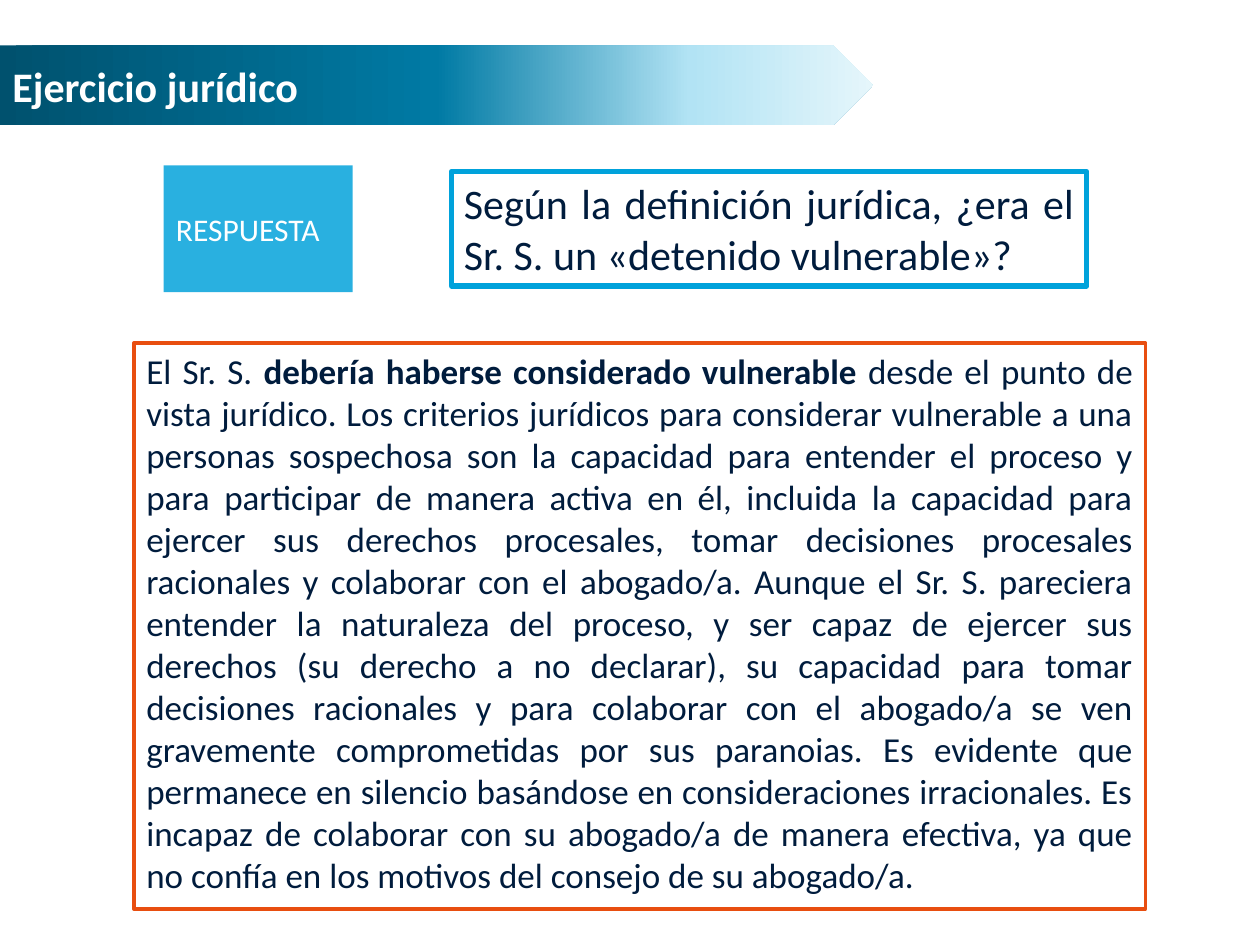
"""Build the legal exercise slide with its question and answer."""
from lxml.etree import SubElement
from pptx import Presentation
from pptx.dml.color import RGBColor
from pptx.enum.shapes import MSO_SHAPE
from pptx.enum.text import MSO_ANCHOR, PP_ALIGN
from pptx.oxml.ns import qn
from pptx.util import Pt

THEME = {
    "font": "Calibri",
    "white": "FFFFFF",
    "ink": "001C3D",
    "blue": "00A2DB",
    "orange": "E84E10",
    "banner": [(0, "00516E"), (50, "007AA4"), (79, "B2E3F4"), (100, "E5F6FB")],
    "label_opacity": 84,
    "large": 24,
    "body": 20,
    "label": 18,
}

TITLE = [("Ejercicio jurídico", True)]
QUESTION = [("Según la definición jurídica, ¿era el Sr. S. un «detenido vulnerable»?", False)]
LABEL = [("RESPUESTA", False)]
ANSWER = [
    ("El Sr. S. ", False),
    ("debería haberse considerado vulnerable", True),
    (
        " desde el punto de vista jurídico. Los criterios jurídicos para considerar "
        "vulnerable a una personas sospechosa son la capacidad para entender el proceso "
        "y para participar de manera activa en él, incluida la capacidad para ejercer "
        "sus derechos procesales, tomar decisiones procesales racionales y colaborar "
        "con el abogado/a. Aunque el Sr. S. pareciera entender la naturaleza del "
        "proceso, y ser capaz de ejercer sus derechos (su derecho a no declarar), su "
        "capacidad para tomar decisiones racionales y para colaborar con el abogado/a "
        "se ven gravemente comprometidas por sus paranoias. Es evidente que permanece "
        "en silencio basándose en consideraciones irracionales. Es incapaz de colaborar "
        "con su abogado/a de manera efectiva, ya que no confía en los motivos del "
        "consejo de su abogado/a.",
        False,
    ),
]


def color(name):
    return RGBColor.from_string(THEME[name])


def add_box(page, place, spans, size, ink, fill, line=None, preset=MSO_SHAPE.RECTANGLE,
            anchor=MSO_ANCHOR.MIDDLE, align=PP_ALIGN.LEFT):
    box = page.shapes.add_shape(preset, *(Pt(length) for length in place))
    box.shadow.inherit = False
    box.fill.solid()
    box.fill.fore_color.rgb = color(fill)
    if line:
        name, width = line
        box.line.color.rgb = color(name)
        box.line.width = Pt(width)
    else:
        box.line.fill.background()
    frame = box.text_frame
    frame.word_wrap = True
    frame.vertical_anchor = anchor
    para = frame.paragraphs[0]
    para.alignment = align
    para.font.name = THEME["font"]
    para.font.size = Pt(THEME[size])
    para.font.color.rgb = color(ink)
    for text, bold in spans:
        span = para.add_run()
        span.text = text
        span.font.bold = bold
    return box


def set_gradient(box, stops):
    box.fill.gradient()
    box.fill.gradient_angle = 0
    stop_list = box.element.spPr.find(qn("a:gradFill")).find(qn("a:gsLst"))
    for stop in list(stop_list):
        stop_list.remove(stop)
    for percent, value in stops:
        stop = SubElement(stop_list, qn("a:gs"), pos=str(percent * 1000))
        SubElement(stop, qn("a:srgbClr"), val=value)


def set_opacity(box, percent):
    fill_color = box.element.spPr.find(qn("a:solidFill")).find(qn("a:srgbClr"))
    SubElement(fill_color, qn("a:alpha"), val=str(percent * 1000))


def main():
    deck = Presentation()
    deck.slide_width, deck.slide_height = Pt(720), Pt(540)
    page = deck.slides.add_slide(deck.slide_layouts[6])
    banner = add_box(page, (0, 26, 499, 45.5), TITLE, "large", "white", "blue",
                     preset=MSO_SHAPE.PENTAGON)
    set_gradient(banner, THEME["banner"])
    framed = {"anchor": MSO_ANCHOR.TOP, "align": PP_ALIGN.JUSTIFY}
    add_box(page, (258, 98, 363, 65.5), QUESTION, "large", "ink", "white",
            line=("blue", 3), **framed)
    label = add_box(page, (93.5, 94.5, 108, 72.5), LABEL, "label", "white", "blue")
    set_opacity(label, THEME["label_opacity"])
    add_box(page, (76.5, 196, 578, 323.5), ANSWER, "body", "ink", "white",
            line=("orange", 2), **framed)
    deck.save("out.pptx")


if __name__ == "__main__":
    main()
